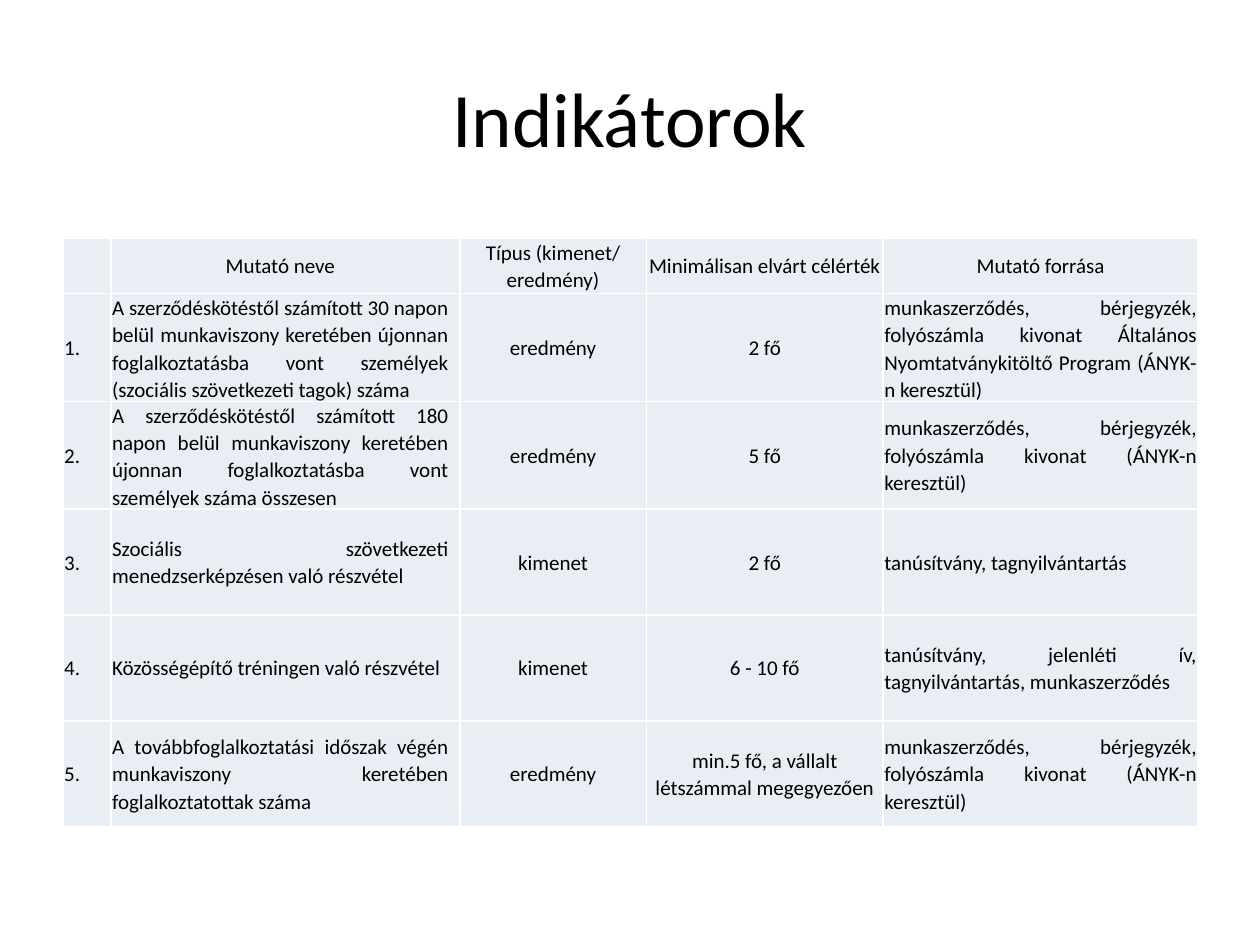
from lxml import etree
from pptx import Presentation
from pptx.dml.color import RGBColor
from pptx.enum.text import MSO_ANCHOR, PP_ALIGN
from pptx.oxml.ns import qn
from pptx.util import Inches, Pt

CENTER, JUSTIFY = PP_ALIGN.CENTER, PP_ALIGN.JUSTIFY
MIDDLE = MSO_ANCHOR.MIDDLE
BLACK = RGBColor(0x00, 0x00, 0x00)
WHITE = RGBColor(0xFF, 0xFF, 0xFF)
PALE_BLUE = RGBColor(0xE9, 0xED, 0xF4)

COLUMN_WIDTHS = [0.38, 2.77, 1.48, 1.88, 2.5]
ROW_HEIGHTS = [0.44] + [0.84] * 5
COLUMN_ALIGNS = [JUSTIFY, JUSTIFY, CENTER, CENTER, JUSTIFY]
RIGHT_MARGINS = [0.01, 0.09, 0.01, 0.01, 0.01]

HEADER = ["", "Mutató neve", "Típus (kimenet/\neredmény)",
          "Minimálisan elvárt célérték", "Mutató forrása"]
INDICATORS = [
    ["1.", "A szerződéskötéstől számított 30 napon belül munkaviszony keretében "
     "újonnan foglalkoztatásba vont személyek (szociális szövetkezeti tagok) száma",
     "eredmény", "2 fő",
     "munkaszerződés, bérjegyzék, folyószámla kivonat Általános "
     "Nyomtatványkitöltő Program (ÁNYK-n keresztül)"],
    ["2.", "A szerződéskötéstől számított 180 napon belül munkaviszony keretében "
     "újonnan foglalkoztatásba vont személyek száma összesen",
     "eredmény", "5 fő",
     "munkaszerződés, bérjegyzék, folyószámla kivonat (ÁNYK-n keresztül)"],
    ["3.", "Szociális szövetkezeti menedzserképzésen való részvétel",
     "kimenet", "2 fő", "tanúsítvány, tagnyilvántartás"],
    ["4.", "Közösségépítő tréningen való részvétel",
     "kimenet", "6 - 10 fő",
     "tanúsítvány, jelenléti ív, tagnyilvántartás, munkaszerződés"],
    ["5.", "A továbbfoglalkoztatási időszak végén munkaviszony keretében "
     "foglalkoztatottak száma",
     "eredmény", "min.5 fő, a vállalt létszámmal megegyezően",
     "munkaszerződés, bérjegyzék, folyószámla kivonat (ÁNYK-n keresztül)"],
]


class PageBuilder:
    font_name = "Calibri"
    color = BLACK

    def __init__(self, page):
        self.page = page

    def set_text(self, frame, text, size, align, spacing=1.0):
        frame.text = text
        for para in frame.paragraphs:
            para.alignment = align
            para.line_spacing = spacing
            para.font.name = self.font_name
            para.font.size = Pt(size)
            para.font.color.rgb = self.color

    def title(self, text, left, top, width, height):
        box = self.page.shapes.add_textbox(
            Inches(left), Inches(top), Inches(width), Inches(height))
        frame = box.text_frame
        frame.word_wrap = True
        frame.vertical_anchor = MIDDLE
        self.set_text(frame, text, 44, CENTER)

    def table(self, rows, left, top):
        table = self.page.shapes.add_table(
            len(rows), len(COLUMN_WIDTHS), Inches(left), Inches(top),
            Inches(sum(COLUMN_WIDTHS)), Inches(sum(ROW_HEIGHTS))).table
        for column, width in zip(table.columns, COLUMN_WIDTHS):
            column.width = Inches(width)
        for row, height in zip(table.rows, ROW_HEIGHTS):
            row.height = Inches(height)
        for r, texts in enumerate(rows):
            for c, text in enumerate(texts):
                align = COLUMN_ALIGNS[c] if r else CENTER
                self.cell(table.cell(r, c), text, align, RIGHT_MARGINS[c])

    def cell(self, cell, text, align, right_margin):
        cell.margin_left = Inches(0.01)
        cell.margin_right = Inches(right_margin)
        cell.margin_top = cell.margin_bottom = Inches(0)
        cell.vertical_anchor = MIDDLE
        self.set_text(cell.text_frame, text, 12, align, 1.07)
        self.borders(cell)
        cell.fill.solid()
        cell.fill.fore_color.rgb = PALE_BLUE

    def borders(self, cell):
        """Draw a 1 pt white line on every side; must precede the fill."""
        properties = cell._tc.get_or_add_tcPr()
        for side in ("a:lnL", "a:lnR", "a:lnT", "a:lnB"):
            line = etree.SubElement(properties, qn(side), w=str(Pt(1)))
            fill = etree.SubElement(line, qn("a:solidFill"))
            etree.SubElement(fill, qn("a:srgbClr"), val=str(WHITE))


def main():
    deck = Presentation()
    deck.slide_width, deck.slide_height = Inches(10), Inches(7.5)
    builder = PageBuilder(deck.slides.add_slide(deck.slide_layouts[6]))
    builder.title("Indikátorok", 0.5, 0.3, 9, 1.25)
    builder.table([HEADER] + INDICATORS, 0.5, 1.89)
    deck.save("out.pptx")


if __name__ == "__main__":
    main()
